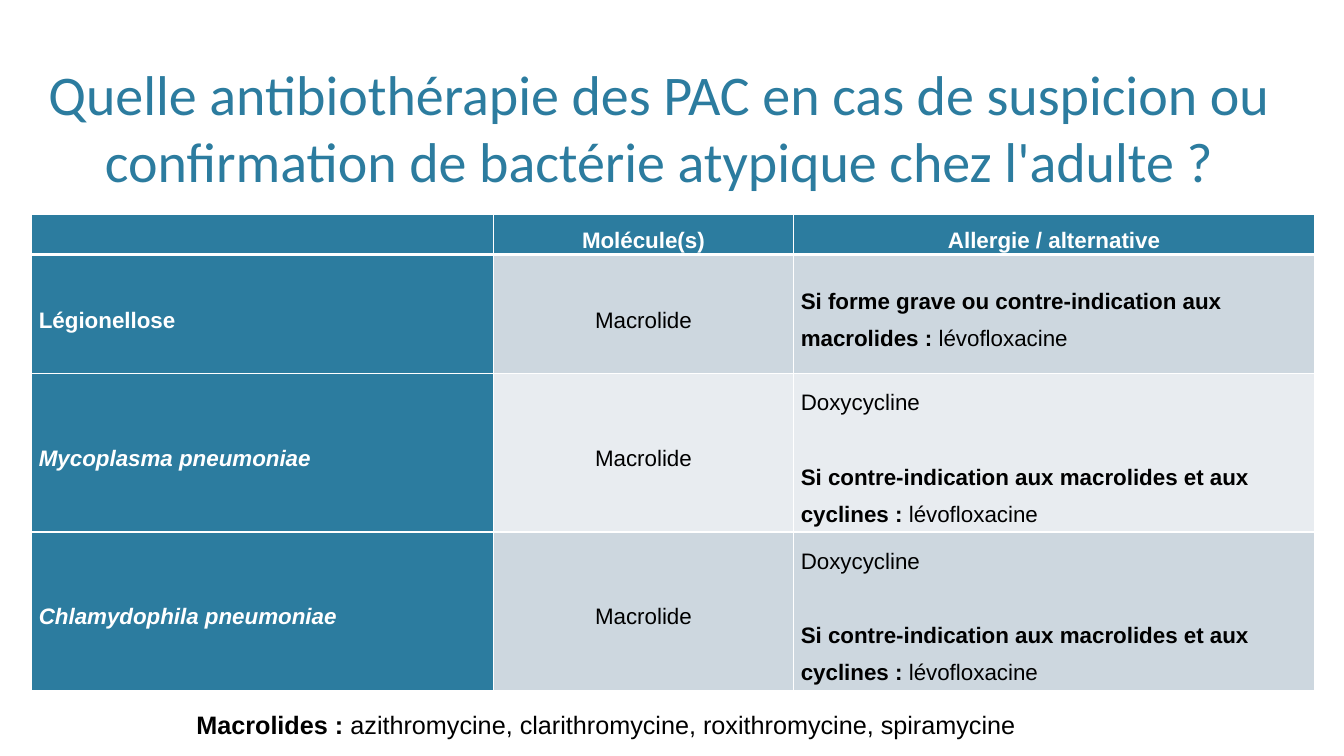
import dataclasses
import pptx
import pptx.util
import pptx.dml.color
import pptx.enum.text
import pptx.oxml

Cm, Pt = pptx.util.Cm, pptx.util.Pt
RGB = pptx.dml.color.RGBColor.from_string
ALIGN = pptx.enum.text.PP_ALIGN
ANCHOR = pptx.enum.text.MSO_ANCHOR


@dataclasses.dataclass(frozen=True)
class Theme:
    """Colours, fonts and type sizes."""
    teal: str = "2C7C9F"
    white: str = "FFFFFF"
    black: str = "000000"
    bands: tuple = ("CDD7DF", "E8ECF0")
    head: str = "Calibri"
    body: str = "Arial"
    large: float = 40
    note: float = 18
    cell: float = 16
    gap: float = 26.7


THEME = Theme()
TITLE = ("Quelle antibiothérapie des PAC en cas de suspicion ou "
         "confirmation de bactérie atypique chez l'adulte ?")
HEADS = ("", "Molécule(s)", "Allergie / alternative")
DRUG = "lévofloxacine"
SEVERE = [[("Si forme grave ou contre-indication aux macrolides : ", True),
           (DRUG, False)]]
CYCLINE = [[("Doxycycline", False)],
           [("Si contre-indication aux macrolides et aux cyclines : ", True),
            (DRUG, False)]]
ROWS = (("Légionellose", False, SEVERE),
        ("Mycoplasma pneumoniae", True, CYCLINE),
        ("Chlamydophila pneumoniae", True, CYCLINE))
NOTE = (("Macrolides : ", True),
        ("azithromycine, clarithromycine, roxithromycine, spiramycine", False))
WIDTHS = (11.63, 7.57, 13.13)
HEIGHTS = (0.91, 3, 3.76, 3.76)


def write(para, parts, size, color, face=THEME.body, italic=False):
    """Fill a paragraph with (text, bold) parts in one style."""
    for text, bold in parts:
        run = para.add_run()
        run.text = text
        font = run.font
        font.name, font.size = face, Pt(size)
        font.bold, font.italic = bold, italic
        font.color.rgb = RGB(color)


def frame(slide, box):
    """Add a wrapping text box and return its text frame."""
    text = slide.shapes.add_textbox(*map(Cm, box)).text_frame
    text.word_wrap = True
    return text


def title(slide, box):
    """Place the centred title at the foot of its box."""
    text = frame(slide, box)
    text.vertical_anchor = ANCHOR.BOTTOM
    para = text.paragraphs[0]
    para.alignment = ALIGN.CENTER
    write(para, [(TITLE, False)], THEME.large, THEME.teal, THEME.head)


def edge(cell, base):
    """Draw white borders, with the bottom one of the given width."""
    props = cell._tc.get_or_add_tcPr()
    for spot, (side, width) in enumerate(
            (("L", 1), ("R", 1), ("T", 1), ("B", base))):
        line = pptx.oxml.parse_xml(
            f'<a:ln{side} xmlns:a="http://schemas.openxmlformats.org/'
            f'drawingml/2006/main" w="{Pt(width)}"><a:solidFill>'
            f'<a:srgbClr val="{THEME.white}"/></a:solidFill></a:ln{side}>')
        props.insert(spot, line)


def fill(cell, paras, back, color, align, italic=False, base=1):
    """Style one cell and write its paragraphs."""
    cell.fill.solid()
    cell.fill.fore_color.rgb = RGB(back)
    edge(cell, base)
    cell.vertical_anchor = ANCHOR.MIDDLE
    cell.margin_left = cell.margin_right = Cm(0.18)
    cell.margin_top = cell.margin_bottom = 0
    text = cell.text_frame
    for spot, parts in enumerate(paras):
        para = text.add_paragraph() if spot else text.paragraphs[0]
        para.alignment, para.line_spacing = align, 1.5
        if spot:
            para.space_before = Pt(THEME.gap)
        write(para, parts, THEME.cell, color, italic=italic)


def grid(slide, box):
    """Place the treatment table."""
    table = slide.shapes.add_table(
        len(HEIGHTS), len(WIDTHS), *map(Cm, box)).table
    table.horz_banding = False
    for col, width in zip(table.columns, WIDTHS):
        col.width = Cm(width)
    for row, height in zip(table.rows, HEIGHTS):
        row.height = Cm(height)
    for col, head in enumerate(HEADS):
        paras = [[(head, True)]] if head else []
        fill(table.cell(0, col), paras, THEME.teal, THEME.white,
             ALIGN.CENTER, base=3)
    for row, (germ, latin, other) in enumerate(ROWS, 1):
        band = THEME.bands[(row - 1) % 2]
        fill(table.cell(row, 0), [[(germ, True)]], THEME.teal, THEME.white,
             ALIGN.LEFT, latin, base=1)
        fill(table.cell(row, 1), [[("Macrolide", False)]], band, THEME.black,
             ALIGN.CENTER)
        fill(table.cell(row, 2), other, band, THEME.black, ALIGN.LEFT)


def note(slide, box):
    """Place the list of macrolides."""
    write(frame(slide, box).paragraphs[0], NOTE, THEME.note, THEME.black)


def main():
    """Build and save the slide."""
    deck = pptx.Presentation()
    deck.slide_width, deck.slide_height = Cm(33.87), Cm(19.05)
    slide = deck.slides.add_slide(deck.slide_layouts[6])
    title(slide, (0.91, 1.3, 31.39, 3.71))
    grid(slide, (0.8, 5.4, sum(WIDTHS), sum(HEIGHTS)))
    note(slide, (4.7, 17.75, 26.72, 1.02))
    deck.save("out.pptx")


if __name__ == "__main__":
    main()
